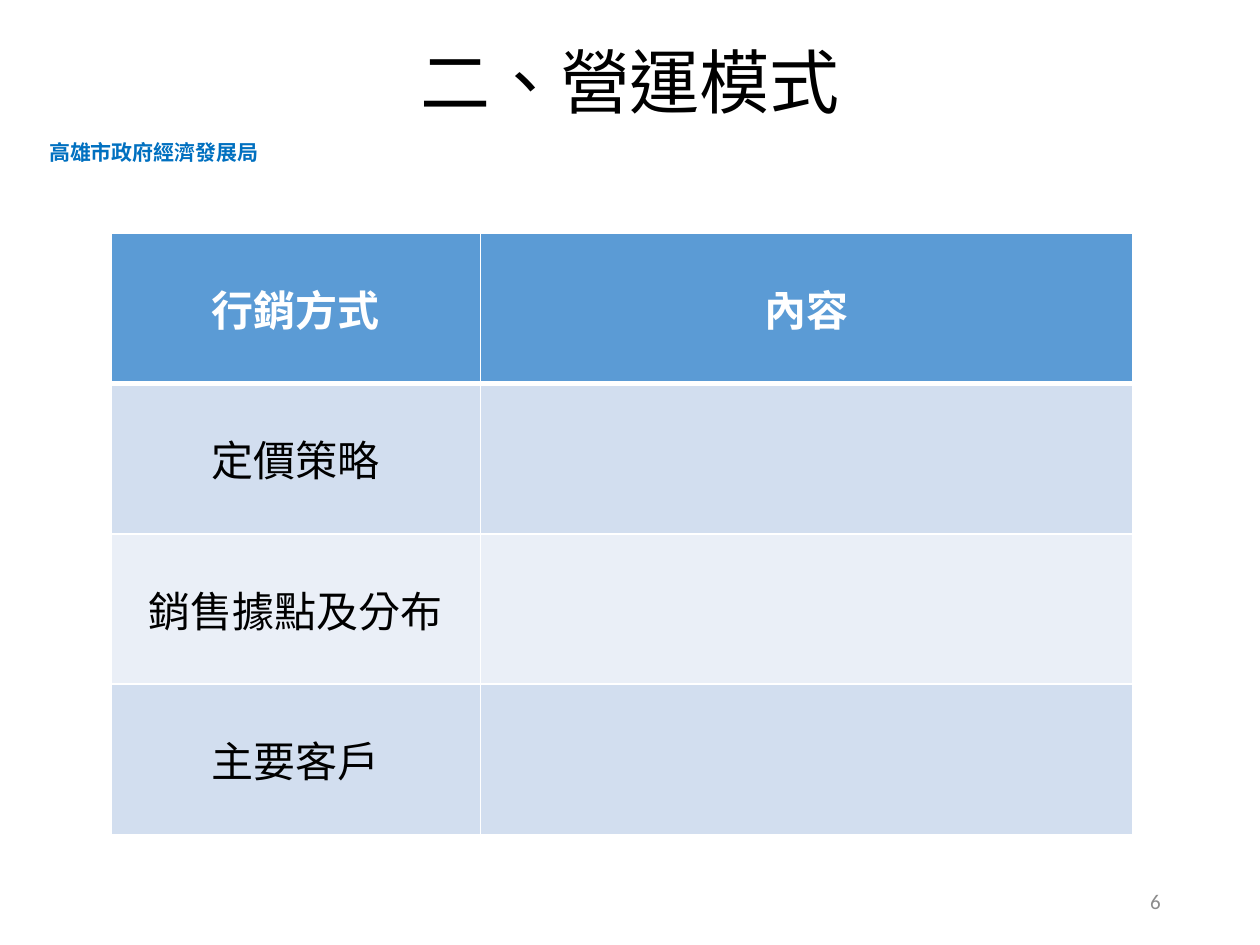
"""Build the slide on the operating model with its marketing table."""
import pptx
import pptx.dml.color
import pptx.enum.lang
import pptx.enum.text
import pptx.oxml.ns
import pptx.util
from lxml import etree

Cm = pptx.util.Cm
Align = pptx.enum.text.PP_ALIGN
Anchor = pptx.enum.text.MSO_ANCHOR
Fit = pptx.enum.text.MSO_AUTO_SIZE
qn = pptx.oxml.ns.qn

HAN = "Noto Sans CJK SC"
TITLE = "二、營運模式"
BUREAU = "高雄市政府經濟發展局"
PAGE_NUMBER = "6"
ROWS = [("行銷方式", "內容"), ("定價策略", ""), ("銷售據點及分布", ""), ("主要客戶", "")]
COLUMN_WIDTHS = [7.45, 13.14]
ROW_HEIGHT = 3.03
HEADER_FILL = "5B9BD5"
BAND_FILLS = ["D2DEEF", "EAEFF7"]


def rgb(value):
    return pptx.dml.color.RGBColor.from_string(value)


def write(frame, text, color, align, size, bold=False, name=HAN):
    paragraph = frame.paragraphs[0]
    paragraph.alignment = align
    span = paragraph.add_run()
    span.text = text
    formats = {
        "size": pptx.util.Pt(size),
        "bold": bold,
        "name": name,
        "language_id": pptx.enum.lang.MSO_LANGUAGE_ID.TRADITIONAL_CHINESE,
    }
    for key, value in formats.items():
        setattr(span.font, key, value)
    span.font.color.rgb = rgb(color)
    properties = span.font._element
    etree.SubElement(properties, qn("a:ea"), typeface=name)


def place(shape, left, top, width, height):
    bounds = {"left": left, "top": top, "width": width, "height": height}
    for key, value in bounds.items():
        setattr(shape, key, Cm(value))


def set_frame(frame, **formats):
    for key, value in formats.items():
        setattr(frame, key, value)


def add_borders(cell, widths):
    properties = cell._tc.get_or_add_tcPr()
    for side, width in widths.items():
        line = etree.SubElement(properties, qn(f"a:ln{side}"), w=str(pptx.util.Pt(width)))
        fill = etree.SubElement(line, qn("a:solidFill"))
        etree.SubElement(fill, qn("a:srgbClr"), val="FFFFFF")


def add_title(page):
    title = page.shapes.title
    place(title, 1.27, 0.33, 22.86, 2.57)
    set_frame(title.text_frame, vertical_anchor=Anchor.MIDDLE, word_wrap=True, auto_size=Fit.NONE)
    write(title.text_frame, TITLE, "000000", Align.CENTER, 40)


def add_label(page, bounds, frame_formats, *text_formats, **font_formats):
    box = page.shapes.add_textbox(*map(Cm, bounds))
    set_frame(box.text_frame, **frame_formats)
    write(box.text_frame, *text_formats, **font_formats)


def add_marketing_table(page):
    bounds = (2.24, 4.7, sum(COLUMN_WIDTHS), ROW_HEIGHT * len(ROWS))
    table = page.shapes.add_table(len(ROWS), len(COLUMN_WIDTHS), *map(Cm, bounds)).table
    for column, width in zip(table.columns, COLUMN_WIDTHS):
        column.width = Cm(width)
    for row_index, texts in enumerate(ROWS):
        table.rows[row_index].height = Cm(ROW_HEIGHT)
        header = row_index == 0
        fill = HEADER_FILL if header else BAND_FILLS[(row_index - 1) % 2]
        widths = {"L": 1, "R": 1, "T": 3 if row_index == 1 else 1, "B": 3 if header else 1}
        for column_index, text in enumerate(texts):
            cell = table.cell(row_index, column_index)
            cell.vertical_anchor = Anchor.MIDDLE
            add_borders(cell, widths)
            cell.fill.solid()
            cell.fill.fore_color.rgb = rgb(fill)
            if text:
                color = "FFFFFF" if header else "000000"
                write(cell.text_frame, text, color, Align.CENTER, 24, bold=header)


def main():
    deck = pptx.Presentation()
    deck.slide_width, deck.slide_height = Cm(25.4), Cm(19.05)
    page = deck.slides.add_slide(deck.slide_layouts[5])
    add_label(page, (0.74, 2.69, 4.78, 0.77),
              {"word_wrap": False, "auto_size": Fit.SHAPE_TO_FIT_TEXT},
              BUREAU, "0070C0", Align.LEFT, 12, bold=True)
    add_marketing_table(page)
    add_title(page)
    add_label(page, (17.93, 17.65, 5.72, 1.02),
              {"word_wrap": True, "vertical_anchor": Anchor.MIDDLE},
              PAGE_NUMBER, "8C8C8C", Align.RIGHT, 12, name="Calibri")
    deck.save("out.pptx")


if __name__ == "__main__":
    main()
